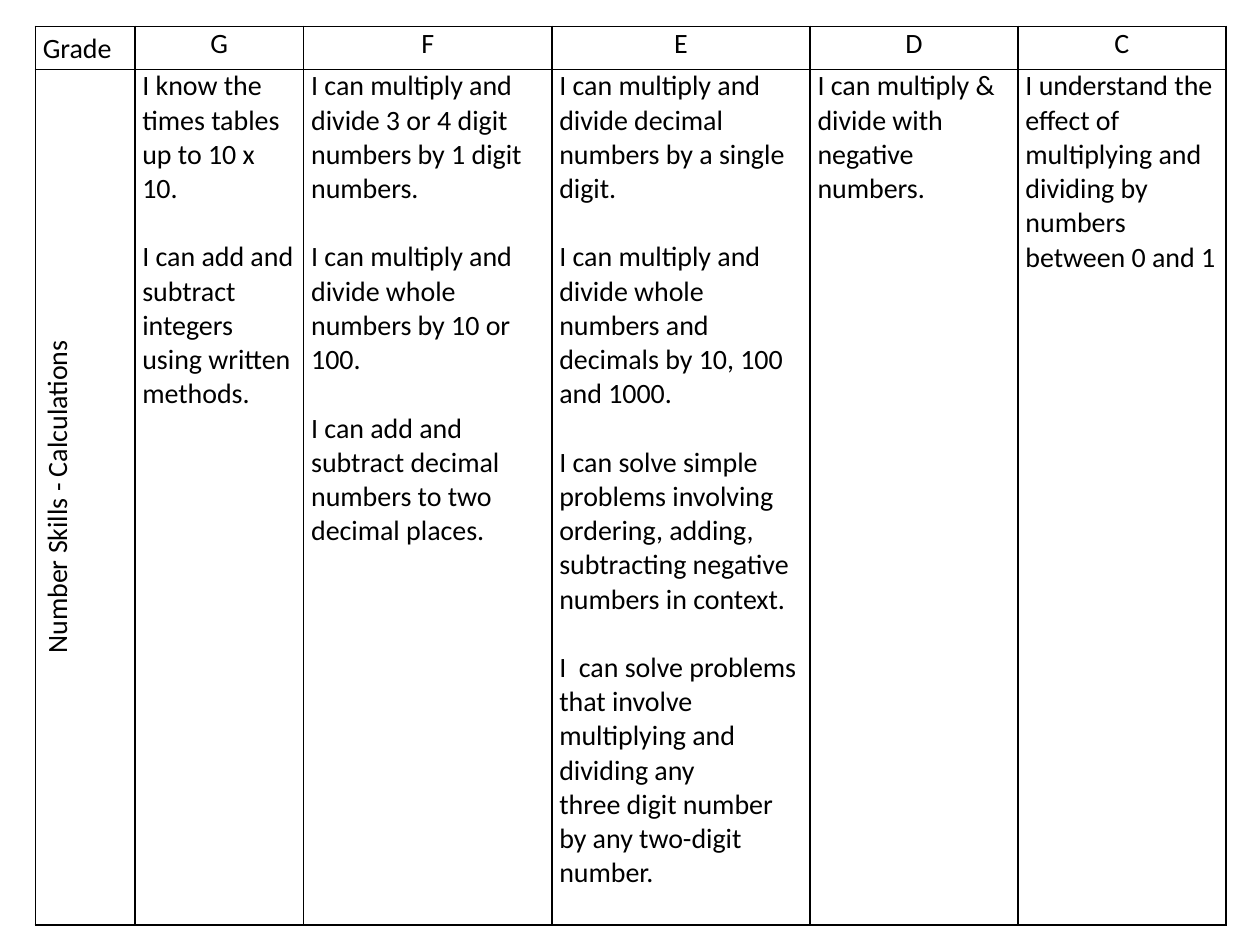
from dataclasses import dataclass

from pptx import Presentation
from pptx.dml.color import RGBColor
from pptx.enum.text import PP_ALIGN
from pptx.oxml.ns import qn
from pptx.table import _Cell
from pptx.util import Inches, Pt
from lxml.etree import SubElement

BLACK = RGBColor(0, 0, 0)
FONT = {"name": "Calibri", "size": Pt(16)}
INSET = {"margin_left": Inches(0.06), "margin_right": Inches(0.06),
         "margin_top": 0, "margin_bottom": 0}
GAP = Pt(19.5)  # one line of text between skills
ROWS = (0.34, 6.79)
SIDES = ("a:lnL", "a:lnR", "a:lnT", "a:lnB")


@dataclass
class Grade:
    name: str
    width: float
    skills: list[str]  # a line feed starts a new paragraph without a gap


GRADES = [
    Grade("G", 1.34, [
        "I know the times tables up to 10 x 10.",
        "I can add and subtract integers using written methods."]),
    Grade("F", 1.97, [
        "I can multiply and divide 3 or 4 digit numbers by 1 digit numbers.",
        "I can multiply and divide whole numbers by 10 or 100.",
        "I can add and subtract decimal numbers to two decimal places."]),
    Grade("E", 2.05, [
        "I can multiply and divide decimal numbers by a single digit.",
        "I can multiply and divide whole numbers and decimals by 10, 100 and 1000.",
        "I can solve simple problems involving ordering, adding, "
        "subtracting negative numbers in context.",
        "I  can solve problems that involve multiplying and dividing any\n"
        "three digit number by any two-digit number."]),
    Grade("D", 1.65, [
        "I can multiply & divide with negative numbers."]),
    Grade("C", 1.65, [
        "I understand the effect of multiplying and dividing by numbers "
        "between 0 and 1"]),
]
LABEL = 0.79  # width of the first column


def style(item: object, values: dict) -> None:
    for key, value in values.items():
        setattr(item, key, value)


def border(cell: _Cell) -> None:
    props = cell._tc.get_or_add_tcPr()
    for spot, side in enumerate(SIDES):
        line = SubElement(props, qn(side), w=str(Pt(1)))
        fill = SubElement(line, qn("a:solidFill"))
        SubElement(fill, qn("a:srgbClr"), val=str(BLACK))
        props.remove(line)
        props.insert(spot, line)


def write(cell: _Cell, texts: list[str], **form) -> None:
    style(cell, INSET)
    cell.fill.background()
    border(cell)
    frame = cell.text_frame
    first = True
    for text in texts:
        for num, line in enumerate(text.split("\n")):
            para = frame.paragraphs[0] if first else frame.add_paragraph()
            if not first and num == 0:
                para.space_before = GAP
            first = False
            style(para, form)
            run = para.add_run()
            run.text = line
            style(run.font, FONT)
            run.font.color.rgb = BLACK


def main() -> None:
    deck = Presentation()
    deck.slide_width, deck.slide_height = Inches(10), Inches(7.5)
    slide = deck.slides.add_slide(deck.slide_layouts[6])

    # Grid
    widths = [LABEL] + [grade.width for grade in GRADES]
    table = slide.shapes.add_table(
        len(ROWS), len(widths), Inches(0.28), Inches(0.21),
        Inches(sum(widths)), Inches(sum(ROWS))).table
    style(table, {"first_row": False, "horz_banding": False})
    for col, width in zip(table.columns, widths):
        col.width = Inches(width)
    for row, height in zip(table.rows, ROWS):
        row.height = Inches(height)

    # Label column
    write(table.cell(0, 0), ["Grade"], line_spacing=1.15)
    topic = table.cell(1, 0)
    write(topic, ["Number Skills - Calculations"],
          line_spacing=1.15, alignment=PP_ALIGN.CENTER)
    topic._tc.get_or_add_tcPr().set("vert", "vert270")

    # Grade columns
    for col, grade in enumerate(GRADES, 1):
        write(table.cell(0, col), [grade.name], alignment=PP_ALIGN.CENTER)
        write(table.cell(1, col), grade.skills)

    deck.save("out.pptx")


if __name__ == "__main__":
    main()
